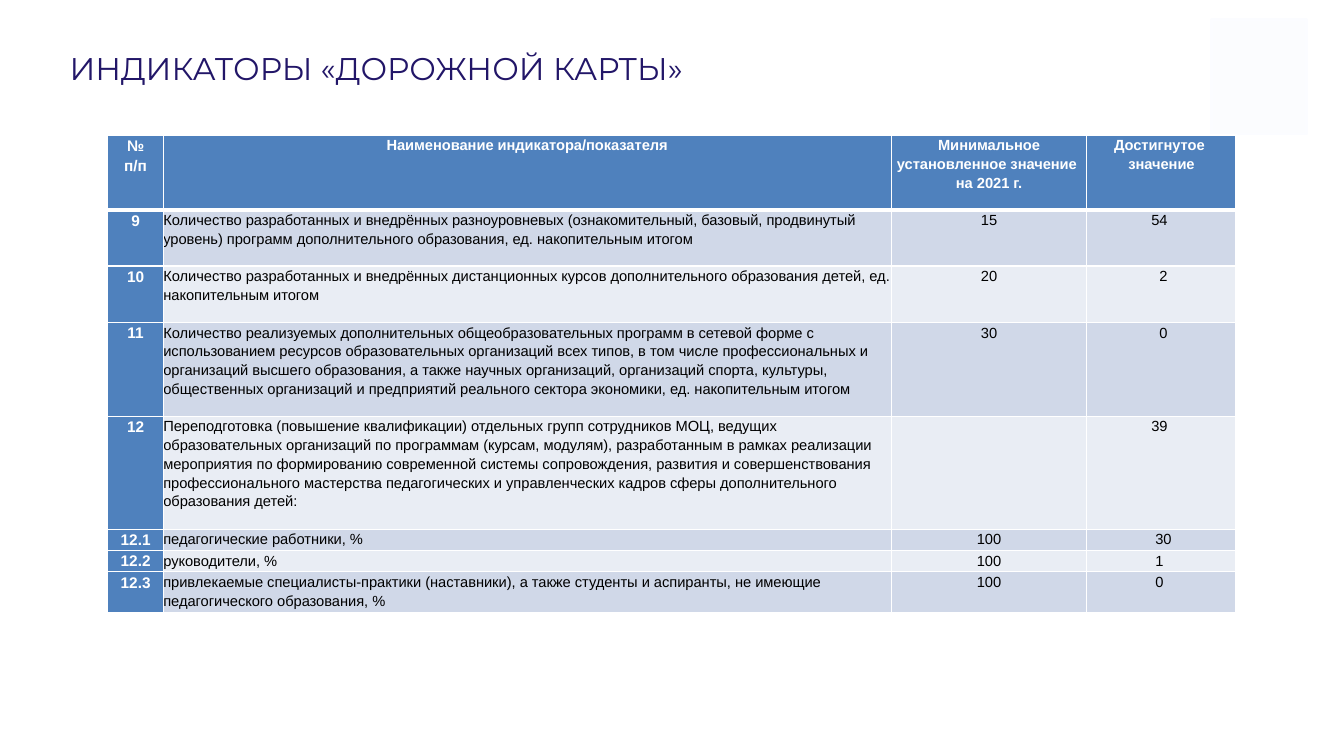
import pptx
import pptx.dml.color
import pptx.enum.shapes
import pptx.enum.text
import pptx.oxml
import pptx.oxml.ns
import pptx.util

Inches = pptx.util.Inches
Pt = pptx.util.Pt
RGBColor = pptx.dml.color.RGBColor
ALIGN = pptx.enum.text.PP_ALIGN

NAVY = RGBColor(0x22, 0x16, 0x68)
BLUE = RGBColor(0x4F, 0x81, 0xBD)
BAND_DARK = RGBColor(0xD0, 0xD8, 0xE8)
BAND_LIGHT = RGBColor(0xE9, 0xED, 0xF4)
WHITE = RGBColor(0xFF, 0xFF, 0xFF)
BLACK = RGBColor(0, 0, 0)
PALE = RGBColor(0xFB, 0xFC, 0xFE)
PALE_EDGE = RGBColor(0xFB, 0xFC, 0xFF)

COLUMN_WIDTHS = [0.55, 7.22, 1.94, 1.48]
ROW_HEIGHTS = [0.74, 0.56, 0.56, 0.93, 1.12, 0.19, 0.2, 0.37]
INDICATORS = [
    ("№\nп/п", "Наименование индикатора/показателя",
     "Минимальное установленное значение \nна 2021 г.", "Достигнутое \nзначение"),
    ("9", "Количество разработанных и внедрённых разноуровневых (ознакомительный, базовый, "
     "продвинутый уровень) программ дополнительного образования, ед. накопительным итогом",
     "15", "54 "),
    ("10", "Количество разработанных и внедрённых дистанционных курсов дополнительного "
     "образования детей, ед. накопительным итогом", "20", " 2"),
    ("11", "Количество реализуемых дополнительных общеобразовательных программ в сетевой форме "
     "с использованием ресурсов образовательных организаций всех типов, в том числе "
     "профессиональных и организаций высшего образования, а также научных организаций, "
     "организаций спорта, культуры, общественных организаций и предприятий реального сектора "
     "экономики, ед. накопительным итогом", "30", " 0"),
    ("12", "Переподготовка (повышение квалификации) отдельных групп сотрудников МОЦ, ведущих "
     "образовательных организаций по программам (курсам, модулям), разработанным в рамках "
     "реализации мероприятия по формированию современной системы сопровождения, развития и "
     "совершенствования профессионального мастерства педагогических и управленческих кадров "
     "сферы дополнительного образования детей:", "", "39 "),
    ("12.1", "педагогические работники, %", "100", " 30"),
    ("12.2", "руководители, %", "100", "1 "),
    ("12.3", "привлекаемые специалисты-практики (наставники), а также студенты и аспиранты, "
     "не имеющие педагогического образования, %", "100", "0 "),
]


def add_run(p, text, size, font, color, bold=False):
    """Append one formatted run to a paragraph."""
    r = p.add_run()
    r.text = text
    r.font.size = Pt(size)
    r.font.name = font
    r.font.bold = bold
    r.font.color.rgb = color


def add_title(s, left, top, width, height):
    """Place the slide heading in the given box."""
    tf = s.shapes.add_textbox(Inches(left), Inches(top), Inches(width), Inches(height)).text_frame
    tf.word_wrap = True
    tf.vertical_anchor = pptx.enum.text.MSO_ANCHOR.MIDDLE
    tf.margin_left = tf.margin_right = Inches(0.13)
    tf.margin_top = tf.margin_bottom = Inches(0.07)
    add_run(tf.paragraphs[0], "ИНДИКАТОРЫ «ДОРОЖНОЙ КАРТЫ»", 22.4, "Montserrat", NAVY)


def add_corner_block(s, left, top, width, height):
    """Place the pale rectangle in the given box."""
    sp = s.shapes.add_shape(pptx.enum.shapes.MSO_SHAPE.RECTANGLE,
                            Inches(left), Inches(top), Inches(width), Inches(height))
    sp.shadow.inherit = False
    sp.fill.solid()
    sp.fill.fore_color.rgb = PALE
    sp.line.color.rgb = PALE_EDGE
    sp.line.width = Pt(2)


def set_borders(cell, widths):
    """Draw white cell borders, given the width in points for each side."""
    tc_pr = cell._tc.get_or_add_tcPr()
    for side, width in widths.items():
        tc_pr.append(pptx.oxml.parse_xml(
            f'<a:ln{side} {pptx.oxml.ns.nsdecls("a")} w="{Pt(width)}"><a:solidFill>'
            f'<a:srgbClr val="{WHITE}"/></a:solidFill></a:ln{side}>'))


def fill_cell(cell, text, row, col):
    """Style one table cell by its row and column and write its text."""
    header = row == 0
    accent = header or col == 0
    set_borders(cell, {"L": 1, "R": 1, "T": 3 if row == 1 else 1, "B": 3 if header else 1})
    cell.fill.solid()
    cell.fill.fore_color.rgb = BLUE if accent else BAND_DARK if row % 2 else BAND_LIGHT
    cell.margin_left = cell.margin_right = cell.margin_top = cell.margin_bottom = 0
    tf = cell.text_frame
    for i, line in enumerate(text.split("\n")):
        p = tf.add_paragraph() if i else tf.paragraphs[0]
        p.alignment = ALIGN.LEFT if col == 1 and not header else ALIGN.CENTER
        p.line_spacing = 1.15
        if line:
            add_run(p, line, 11 if col == 0 else 10.5, "Arial",
                    WHITE if accent else BLACK, accent)


def add_indicator_table(s, left, top, width, height):
    """Place the table of indicators in the given box."""
    table = s.shapes.add_table(len(INDICATORS), len(COLUMN_WIDTHS), Inches(left), Inches(top),
                               Inches(width), Inches(height)).table
    for column, size in zip(table.columns, COLUMN_WIDTHS):
        column.width = Inches(size)
    for row, size in zip(table.rows, ROW_HEIGHTS):
        row.height = Inches(size)
    for row, texts in enumerate(INDICATORS):
        for col, text in enumerate(texts):
            fill_cell(table.cell(row, col), text, row, col)


def main():
    """Build the slide and save it."""
    prs = pptx.Presentation()
    prs.slide_width, prs.slide_height = Inches(13.33), Inches(7.5)
    s = prs.slides.add_slide(prs.slide_layouts[6])
    add_title(s, 0.56, 0.28, 7.51, 0.78)
    add_corner_block(s, 12.02, 0.19, 0.94, 1.14)
    add_indicator_table(s, 1.07, 1.34, sum(COLUMN_WIDTHS), sum(ROW_HEIGHTS))
    prs.save("out.pptx")


if __name__ == "__main__":
    main()
